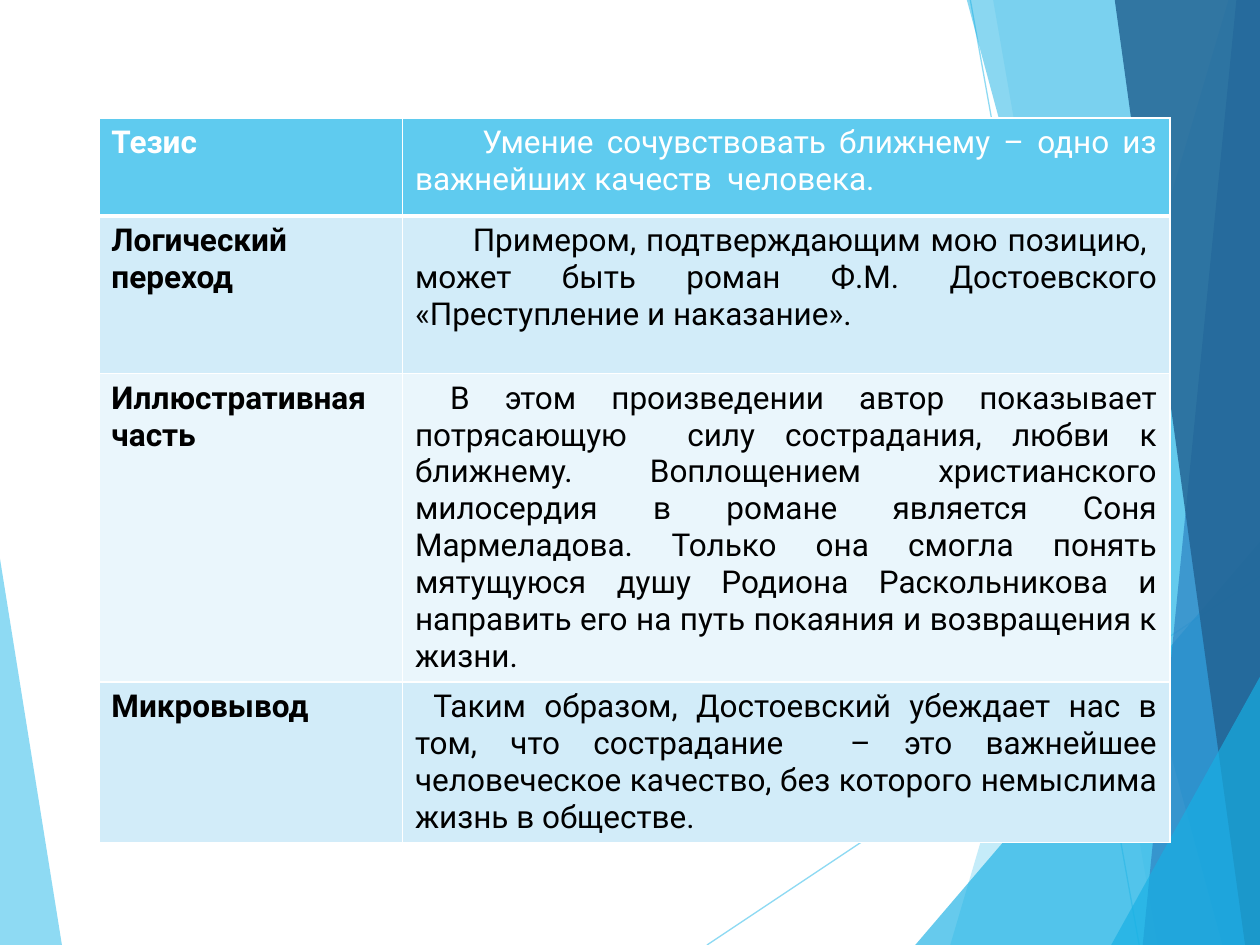
import pptx
import pptx.util
import pptx.dml.color
import pptx.enum.shapes
import pptx.enum.text
import pptx.oxml.ns
from dataclasses import dataclass
from lxml import etree

Pt = pptx.util.Pt
qn = pptx.oxml.ns.qn


@dataclass(frozen=True)
class Theme:
    font: str = "Roboto"
    size: float = 18
    white: str = "FFFFFF"
    text: str = "000000"
    sky: str = "5FCBEF"
    cyan: str = "17B0E4"
    blue: str = "2E83C3"
    navy: str = "226292"
    band_dark: str = "D2ECF9"
    band_light: str = "EAF6FC"


T = Theme()

# Facets from back to front: colour, opacity in percent, corners
FACETS = [
    (T.sky, 36, [(702, 0), (543, 540), (721, 540), (721, 0)]),
    (T.sky, 20, [(567.5, 0), (661.5, 540), (721, 540), (721, 0)]),
    (T.cyan, 66, [(523, 540), (720.5, 309), (720.5, 540)]),
    (T.cyan, 50, [(552.5, 0), (698.5, 540), (721, 540), (721, 0)]),
    (T.blue, 70, [(706.5, 0), (653, 540), (721, 540), (720.5, 0)]),
    (T.navy, 82, [(637, 0), (711.5, 540), (721, 540), (720.5, 0)]),
    (T.cyan, 66, [(635, 540), (721, 385), (721, 540)]),
]
LEFT_FACET = (T.sky, 70, [(-0.5, 316), (35.5, 540.5), (-0.5, 540)])
RAYS = [((404, 540), (720.5, 329)), ((554.5, 0), (651, 540))]

# Table rows: height, label, first-line indent, text
ROWS = [
    (56, "Тезис", 38.5,
     "Умение сочувствовать ближнему – одно из важнейших качеств  человека."),
    (90, "Логический переход", 33,
     "Примером, подтверждающим мою позицию,  может быть роман "
     "Ф.М. Достоевского «Преступление и наказание»."),
    (152, "Иллюстративная часть", 20,
     "В этом произведении автор показывает потрясающую  силу сострадания, "
     "любви к ближнему. Воплощением христианского милосердия в романе "
     "является Соня Мармеладова. Только она смогла понять мятущуюся душу "
     "Родиона Раскольникова и направить его на путь покаяния и "
     "возвращения к жизни."),
    (80, "Микровывод", 10.5,
     "Таким образом, Достоевский убеждает нас в том, что сострадание  – это "
     "важнейшее человеческое качество, без которого немыслима жизнь в "
     "обществе."),
]


def rgb(color):
    return pptx.dml.color.RGBColor.from_string(color)


def set_alpha(sp, percent):
    for clr in sp._element.spPr.iter(qn("a:srgbClr")):
        etree.SubElement(clr, qn("a:alpha"), val=str(percent * 1000))


def add_facet(s, x, y, color, opacity, corners):
    pts = [(Pt(x + px), Pt(y + py)) for px, py in corners]
    fb = s.shapes.build_freeform(*pts[0], scale=1.0)
    fb.add_line_segments(pts[1:], close=True)
    sp = fb.convert_to_shape()
    sp.shadow.inherit = False
    sp.fill.solid()
    sp.fill.fore_color.rgb = rgb(color)
    sp.line.fill.background()
    set_alpha(sp, opacity)


def add_ray(s, x, y, start, end):
    line = s.shapes.add_connector(
        pptx.enum.shapes.MSO_CONNECTOR.STRAIGHT,
        Pt(x + start[0]), Pt(y + start[1]), Pt(x + end[0]), Pt(y + end[1]))
    line.line.color.rgb = rgb(T.sky)
    line.line.width = Pt(0.75)
    set_alpha(line, 70)
    etree.SubElement(line._element.spPr, qn("a:effectLst"))


def add_backdrop(s, x, y):
    add_facet(s, x, y, *LEFT_FACET)
    for start, end in RAYS:
        add_ray(s, x, y, start, end)
    for facet in FACETS:
        add_facet(s, x, y, *facet)


def write_text(tf, text, color=T.text, bold=False, align=None, indent=0):
    p = tf.paragraphs[0]
    p.alignment = align
    if indent:
        p._p.get_or_add_pPr().set("indent", str(Pt(indent)))
    r = p.add_run()
    r.text = text
    r.font.name = T.font
    r.font.size = Pt(T.size)
    r.font.bold = bold
    r.font.color.rgb = rgb(color)


def set_borders(cell, top, bottom):
    tcPr = cell._tc.get_or_add_tcPr()
    widths = {"a:lnL": 1, "a:lnR": 1, "a:lnT": top, "a:lnB": bottom}
    for i, (tag, width) in enumerate(widths.items()):
        ln = etree.Element(qn(tag), w=str(Pt(width)))
        fill = etree.SubElement(ln, qn("a:solidFill"))
        etree.SubElement(fill, qn("a:srgbClr"), val=T.white)
        tcPr.insert(i, ln)


def add_essay_table(s, x, y, widths):
    height = sum(row[0] for row in ROWS)
    table = s.shapes.add_table(len(ROWS), len(widths), Pt(x), Pt(y),
                               Pt(sum(widths)), Pt(height)).table
    table.horz_banding = False
    for col, width in zip(table.columns, widths):
        col.width = Pt(width)
    for i, (row_height, label, indent, text) in enumerate(ROWS):
        table.rows[i].height = Pt(row_height)
        header = i == 0
        fill = T.sky if header else T.band_dark if i % 2 else T.band_light
        color = T.white if header else T.text
        for cell in table.rows[i].cells:
            cell.fill.solid()
            cell.fill.fore_color.rgb = rgb(fill)
            set_borders(cell, 3 if i == 1 else 1, 3 if header else 1)
        write_text(table.cell(i, 0).text_frame, label, color=color, bold=True)
        write_text(table.cell(i, 1).text_frame, text, color=color,
                   align=pptx.enum.text.PP_ALIGN.JUSTIFY, indent=indent)


def main():
    prs = pptx.Presentation()
    prs.slide_width, prs.slide_height = Pt(720), Pt(540)
    s = prs.slides.add_slide(prs.slide_layouts[6])
    add_backdrop(s, 0, 0)
    add_essay_table(s, 56.5, 67.5, [173.5, 438.5])
    prs.save("out.pptx")


if __name__ == "__main__":
    main()
